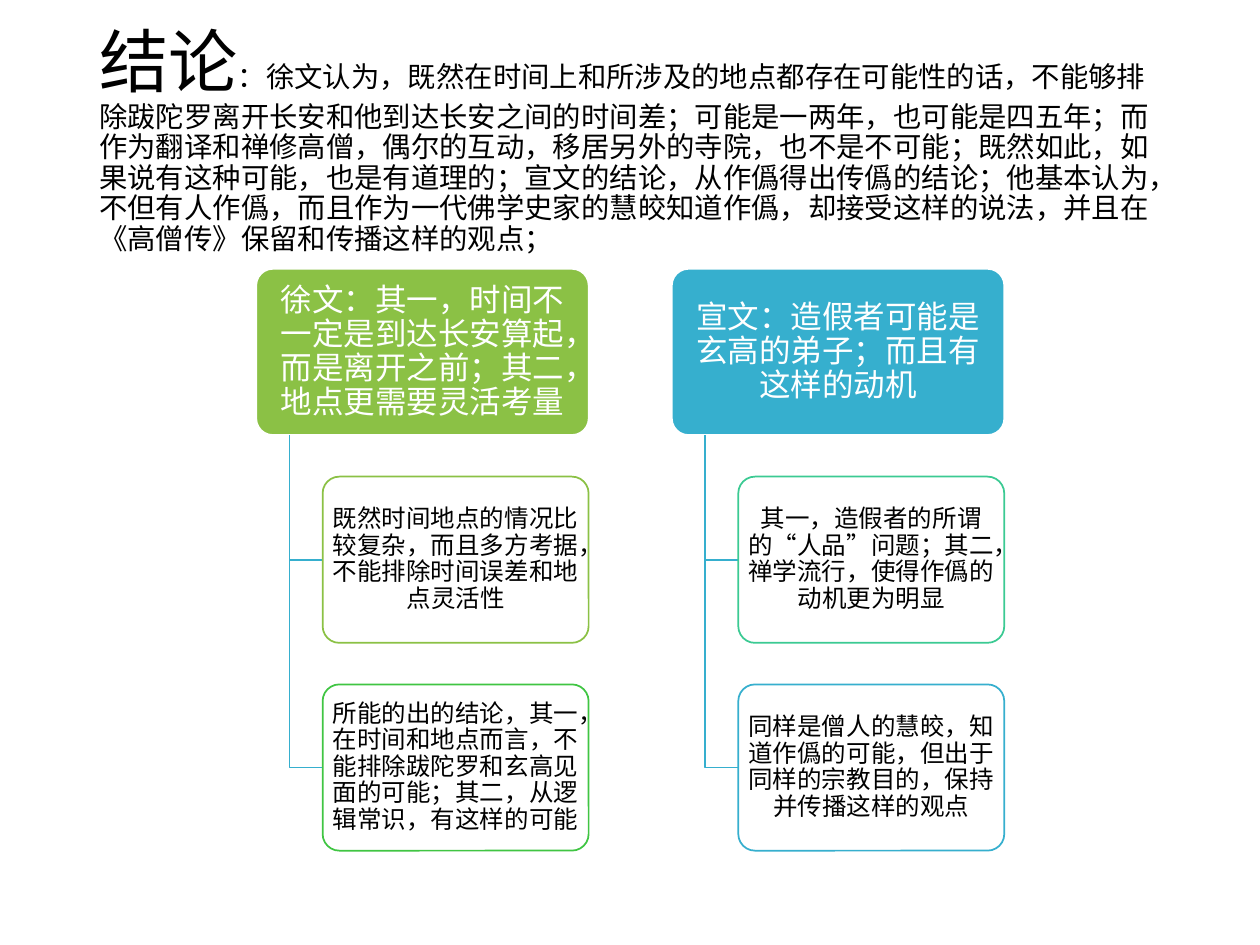
import pptx
import pptx.dml.color
import pptx.enum.shapes
import pptx.enum.text
import pptx.util
from dataclasses import dataclass
from lxml import etree

Pt = pptx.util.Pt
ALIGN = pptx.enum.text.PP_ALIGN
MIDDLE = pptx.enum.text.MSO_ANCHOR.MIDDLE


@dataclass(frozen=True)
class Theme:
    font: str = "Times New Roman"
    black: str = "000000"
    white: str = "FFFFFF"
    lime: str = "8BC145"
    green: str = "40C543"
    teal: str = "3BCA93"
    blue: str = "36AFCE"
    lead_size: float = 39.6
    title_size: float = 16.2
    head_size: float = 18
    child_size: float = 14


THEME = Theme()

TITLE = [
    ("结论", THEME.lead_size),
    ("：徐文认为，既然在时间上和所涉及的地点都存在可能性的话，不能够排除跋陀罗离开长安和他到达长安之间的时间差；"
     "可能是一两年，也可能是四五年；而作为翻译和禅修高僧，偶尔的互动，移居另外的寺院，也不是不可能；"
     "既然如此，如果说有这种可能，也是有道理的；宣文的结论，从作僞得出传僞的结论；他基本认为，"
     "不但有人作僞，而且作为一代佛学史家的慧皎知道作僞，却接受这样的说法，并且在《高僧传》保留和传播这样的观点；",
     THEME.title_size),
]

BRANCHES = [
    ("徐文：其一，时间不一定是到达长安算起，而是离开之前；其二，地点更需要灵活考量", THEME.lime, [
        ("既然时间地点的情况比较复杂，而且多方考据，不能排除时间误差和地点灵活性", THEME.lime),
        ("所能的出的结论，其一，在时间和地点而言，不能排除跋陀罗和玄高见面的可能；其二，从逻辑常识，有这样的可能",
         THEME.green),
    ]),
    ("宣文：造假者可能是玄高的弟子；而且有这样的动机", THEME.blue, [
        ("其一，造假者的所谓的“人品”问题；其二，禅学流行，使得作僞的动机更为明显", THEME.teal),
        ("同样是僧人的慧皎，知道作僞的可能，但出于同样的宗教目的，保持并传播这样的观点", THEME.blue),
    ]),
]


def rgb(value):
    return pptx.dml.color.RGBColor.from_string(value)


def apply(target, formats):
    for name, value in formats.items():
        setattr(target, name, value)


def add_span(para, text, size, color):
    span = para.add_run()
    span.text = text
    apply(span.font, {"name": THEME.font, "size": Pt(size)})
    span.font.color.rgb = rgb(color)


def set_line(shape, color):
    shape.line.color.rgb = rgb(color)
    shape.line.width = Pt(1)
    shape.shadow.inherit = False


def add_title(page, left, top, width, height):
    title = page.shapes.title
    apply(title, {"left": Pt(left), "top": Pt(top), "width": Pt(width), "height": Pt(height)})
    apply(title.text_frame, {"word_wrap": True, "vertical_anchor": MIDDLE,
                             "auto_size": pptx.enum.text.MSO_AUTO_SIZE.NONE})
    para = title.text_frame.paragraphs[0]
    apply(para, {"alignment": ALIGN.LEFT, "line_spacing": 0.9})
    for text, size in TITLE:
        add_span(para, text, size, THEME.black)


def add_box(page, left, top, width, height, text, size, fill, line, color, insets, alpha=None):
    box = page.shapes.add_shape(pptx.enum.shapes.MSO_SHAPE.ROUNDED_RECTANGLE,
                                Pt(left), Pt(top), Pt(width), Pt(height))
    box.adjustments[0] = 0.1
    box.fill.solid()
    box.fill.fore_color.rgb = rgb(fill)
    if alpha:
        paint = box.fill._xPr.find(".//" + pptx.oxml.ns.qn("a:srgbClr"))
        etree.SubElement(paint, pptx.oxml.ns.qn("a:alpha"), val=str(alpha * 1000))
    set_line(box, line)
    side, edge = map(Pt, insets)
    frame = box.text_frame
    apply(frame, {"word_wrap": True, "vertical_anchor": MIDDLE, "margin_left": side,
                  "margin_right": side, "margin_top": edge, "margin_bottom": edge})
    para = frame.paragraphs[0]
    apply(para, {"alignment": ALIGN.CENTER, "line_spacing": 0.9})
    add_span(para, text, size, color)


def add_elbow(page, left, top, right, bottom):
    builder = page.shapes.build_freeform(Pt(left), Pt(top))
    builder.add_line_segments([(Pt(left), Pt(bottom)), (Pt(right), Pt(bottom))], close=False)
    elbow = builder.convert_to_shape()
    elbow.fill.background()
    set_line(elbow, THEME.blue)


def add_branch(page, left, top, width, height, branch):
    heading, color, children = branch
    box_height = height / 3.5
    step = box_height * 1.25
    indent = width / 5
    add_box(page, left, top, width, box_height, heading, THEME.head_size,
            color, THEME.white, THEME.white, (2.7, 1.8))
    for row, (text, line) in enumerate(children, 1):
        child_top = top + row * step
        add_elbow(page, left + indent / 2, top + box_height,
                  left + indent, child_top + box_height / 2)
        add_box(page, left + indent, child_top, width - indent, box_height, text,
                THEME.child_size, THEME.white, line, THEME.black, (2.1, 1.4), alpha=90)


def add_hierarchy(page, left, top, width, height):
    branch_width = width / 2.25
    for column, branch in enumerate(BRANCHES):
        add_branch(page, left + column * branch_width * 1.25, top, branch_width, height, branch)


def main():
    deck = pptx.Presentation()
    apply(deck, {"slide_width": Pt(720), "slide_height": Pt(540)})
    page = deck.slides.add_slide(deck.slide_layouts[5])
    add_title(page, 49.5, 28.8, 621, 104.4)
    add_hierarchy(page, 146.4, 153.6, 427.5, 332.5)
    deck.save("out.pptx")


if __name__ == "__main__":
    main()
